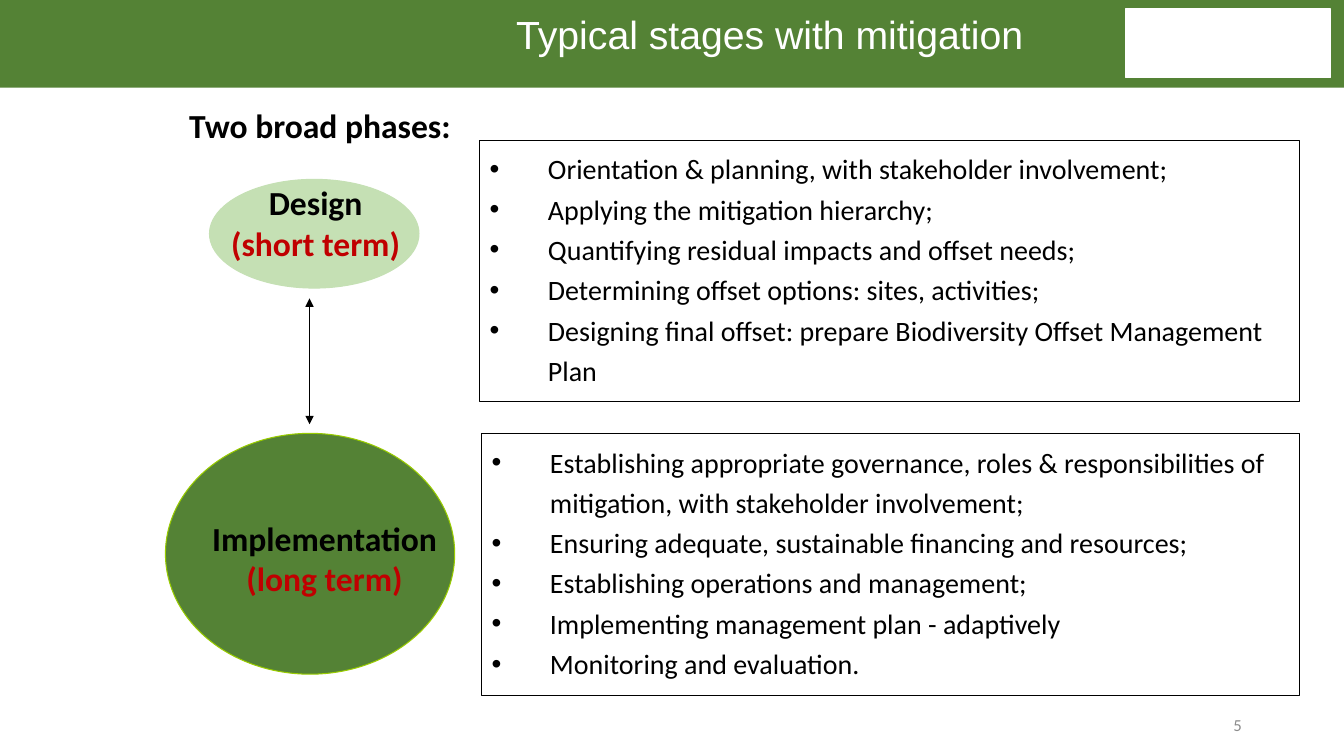
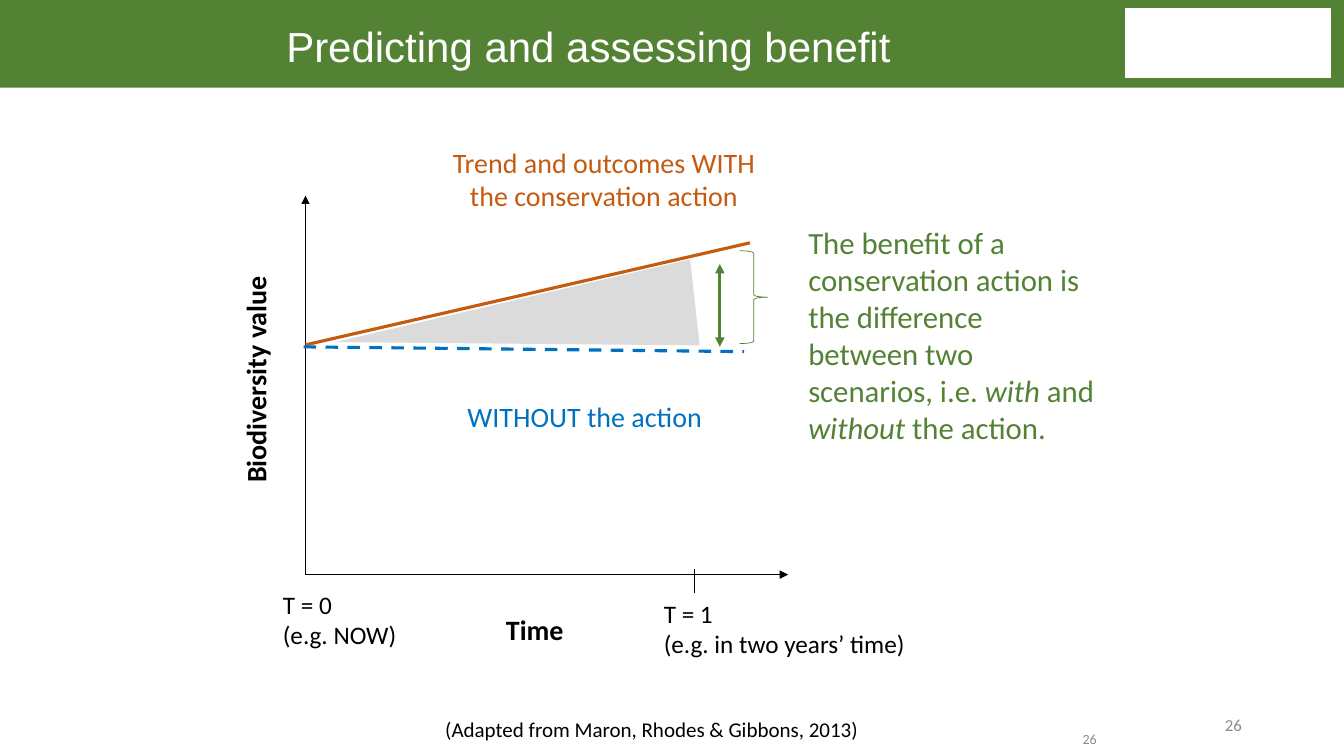
from lxml.etree import SubElement
from pptx import Presentation
from pptx.dml.color import RGBColor
from pptx.enum.dml import MSO_LINE as Dash
from pptx.enum.shapes import MSO_CONNECTOR as Link, MSO_SHAPE as Preset
from pptx.enum.text import MSO_ANCHOR as Anchor, PP_ALIGN as Align
from pptx.oxml.ns import qn
from pptx.util import Cm, Pt

GREEN = RGBColor(0x54, 0x82, 0x35)
PALE_GREEN = RGBColor(0xC5, 0xE0, 0xB4)
LIME = RGBColor(0x99, 0xCC, 0x00)
RED = RGBColor(0xC0, 0x00, 0x00)
ORANGE = RGBColor(0xC5, 0x5A, 0x11)
BLUE = RGBColor(0x00, 0x70, 0xC0)
LIGHT_GREY = RGBColor(0xDB, 0xDB, 0xDB)
GREY = RGBColor(0x8C, 0x8C, 0x8C)
BLACK = RGBColor(0, 0, 0)
WHITE = RGBColor(0xFF, 0xFF, 0xFF)

SLIDE_WIDTH, SLIDE_HEIGHT = 33.87, 19.05
BULLET_INDENT = 1.47


def place(box, origin=(0, 0)):
    """Turn a box in centimetres, measured from an origin, into lengths."""
    left, top, width, height = box
    return Cm(origin[0] + left), Cm(origin[1] + top), Cm(width), Cm(height)


def add_bullet(paragraph):
    """Give a paragraph a round bullet and a hanging indent."""
    properties = paragraph._p.get_or_add_pPr()
    properties.set("marL", str(Cm(BULLET_INDENT)))
    properties.set("indent", str(-Cm(BULLET_INDENT)))
    SubElement(properties, qn("a:buFont"), typeface="Arial")
    SubElement(properties, qn("a:buChar"), char="•")


def write(frame, paragraphs, size=20, color=BLACK, font="Calibri", bold=False,
          align=Align.LEFT, spacing=None, anchor=Anchor.TOP, wrap=True,
          bullets=False):
    """Fill a frame with paragraphs, each a string or a list of (text, format)."""
    frame.word_wrap = wrap
    frame.vertical_anchor = anchor
    for index, content in enumerate(paragraphs):
        paragraph = frame.paragraphs[0] if index == 0 else frame.add_paragraph()
        paragraph.alignment = align
        if spacing:
            paragraph.line_spacing = spacing
        if bullets:
            add_bullet(paragraph)
        pieces = [(content, {})] if isinstance(content, str) else content
        for words, changes in pieces:
            run = paragraph.add_run()
            run.text = words
            run.font.name = font
            run.font.size = Pt(size)
            run.font.bold = bold
            run.font.italic = changes.get("italic", False)
            run.font.color.rgb = changes.get("color", color)


def add_text(slide, box, *paragraphs, origin=(0, 0), **style):
    """Add a text box and return it."""
    label = slide.shapes.add_textbox(*place(box, origin))
    write(label.text_frame, paragraphs, **style)
    return label


def add_preset(slide, preset, box, origin=(0, 0), fill=None, line=None, weight=0.75):
    """Add a preset shape with a plain fill and outline."""
    shape = slide.shapes.add_shape(preset, *place(box, origin))
    shape.shadow.inherit = False
    if fill is None:
        shape.fill.background()
    else:
        shape.fill.solid()
        shape.fill.fore_color.rgb = fill
    if line is None:
        shape.line.fill.background()
    else:
        shape.line.color.rgb = line
        shape.line.width = Pt(weight)
    return shape


def add_line(slide, start, end, origin=(0, 0), color=BLACK, weight=0.5,
             dash=None, ends=()):
    """Add a straight line, with arrowheads at the named ends."""
    x, y = origin
    line = slide.shapes.add_connector(
        Link.STRAIGHT, Cm(x + start[0]), Cm(y + start[1]),
        Cm(x + end[0]), Cm(y + end[1]))
    line.line.color.rgb = color
    line.line.width = Pt(weight)
    if dash:
        line.line.dash_style = dash
    properties = line.element.spPr
    outline = properties.find(qn("a:ln"))
    for end_name in ends:
        SubElement(outline, qn(f"a:{end_name}"), type="triangle")
    SubElement(properties, qn("a:effectLst"))


def add_frame(deck, title, title_box, title_size, number):
    """Add a slide with its band, panel, title and number."""
    slide = deck.slides.add_slide(deck.slide_layouts[6])
    add_preset(slide, Preset.RECTANGLE, (0, 0, SLIDE_WIDTH, 2.21), fill=GREEN)
    add_preset(slide, Preset.RECTANGLE, (28.37, 0.23, 5.16, 1.73),
               fill=WHITE, line=WHITE, weight=1)
    add_text(slide, title_box, title, size=title_size, color=WHITE,
             font="Arial", align=Align.CENTER, spacing=0.9)
    add_text(slide, (29.31, 17.88, 2.24, 0.79), number, size=12, color=GREY,
             align=Align.RIGHT, anchor=Anchor.MIDDLE)
    return slide


def add_phase(slide, box, caption_box, name, term, fill, line):
    """Add an ellipse with a phase name and term placed from its corner."""
    add_preset(slide, Preset.OVAL, box, fill=fill, line=line)
    add_text(slide, caption_box, name, [(term, {"color": RED})], origin=box[:2],
             size=24, bold=True, align=Align.CENTER)


def add_steps(slide, box, *steps):
    """Add an outlined box with a bulleted list of steps."""
    panel = add_preset(slide, Preset.RECTANGLE, box, line=BLACK)
    write(panel.text_frame, steps, spacing=1.2, bullets=True)


def add_graph(slide, origin):
    """Add the graph of both trends, measured from the top of its value axis."""
    width, height = 12.16, 9.55
    add_line(slide, (0, 0), (0, height), origin, ends=["headEnd"])
    add_line(slide, (0, height), (width, height), origin, ends=["tailEnd"])
    add_line(slide, (9.8, 9.4), (9.8, 10.01), origin)
    add_line(slide, (0, 3.76), (11.2, 1.19), origin, ORANGE, 2.25)
    add_line(slide, (-0.05, 3.81), (11.05, 3.93), origin, BLUE, 2.25, Dash.DASH)
    add_line(slide, (10.44, 1.72), (10.44, 3.81), origin, GREEN, 2.25,
             ends=["headEnd", "tailEnd"])
    add_preset(slide, Preset.RIGHT_BRACE, (10.94, 1.39, 0.71, 2.34), origin,
               line=GREEN, weight=0.5)
    gap = add_preset(slide, Preset.ISOSCELES_TRIANGLE, (4.19, -1.37, 2.18, 9.12),
                     origin, fill=LIGHT_GREY)
    gap.rotation = 263.7

    add_text(slide, (4.8, 10.39, 1.98, 1.12), "Time", origin=origin,
             bold=True, wrap=False)
    value_label = add_text(slide, (-4.14, 4.04, 5.77, 1.12), "Biodiversity value",
                           origin=origin, bold=True, wrap=False)
    value_label.rotation = 270
    add_text(slide, (-0.82, 9.8, 3.4, 1.8), "T = 0", "(e.g. NOW)",
             origin=origin, size=18, wrap=False)
    add_text(slide, (8.78, 10.01, 6.65, 1.8), "T = 1", "(e.g. in two years’ time)",
             origin=origin, size=18, wrap=False)
    add_text(slide, (3.2, -1.4, 8.64, 1.96),
             "Trend and outcomes WITH the conservation action",
             origin=origin, color=ORANGE, align=Align.CENTER)
    add_text(slide, (3.83, 5, 6.48, 1.12), "WITHOUT the action",
             origin=origin, color=BLUE, wrap=False)


def build_stages(deck):
    """Build the slide on the two phases of mitigation."""
    slide = add_frame(deck, "Typical stages with mitigation",
                      (8.84, 0.28, 21.11, 1.35), 28, "5")
    add_text(slide, (4.52, 2.51, 7.16, 1.27), "Two broad phases:", size=24, bold=True)
    add_phase(slide, (5.28, 4.52, 5.28, 2.74), (-0.17, -0.05, 5.69, 2.3),
              "Design", "(short term)", PALE_GREEN, PALE_GREEN)
    add_phase(slide, (4.17, 10.92, 7.29, 6.07), (0.76, 2.01, 6.5, 2.3),
              "Implementation", "(long term)", GREEN, LIME)
    add_line(slide, (7.8, 10.69), (7.8, 7.52), weight=0.75,
             ends=["headEnd", "tailEnd"])
    add_steps(slide, (12.09, 3.53, 20.65, 6.6),
              "Orientation & planning, with stakeholder involvement;",
              "Applying the mitigation hierarchy;",
              "Quantifying residual impacts and offset needs;",
              "Determining offset options: sites, activities;",
              "Designing final offset: prepare Biodiversity Offset Management Plan")
    add_steps(slide, (12.14, 10.92, 20.6, 6.6),
              "Establishing appropriate governance, roles & responsibilities of "
              "mitigation, with stakeholder involvement;",
              "Ensuring adequate, sustainable financing and resources;",
              "Establishing operations and management;",
              "Implementing management plan - adaptively",
              "Monitoring and evaluation.")


def build_benefit(deck):
    """Build the slide on the benefit of a conservation action."""
    slide = add_frame(deck, "Predicting and assessing benefit",
                      (6.53, 0.53, 16.61, 1.42), 30, "26")
    add_graph(slide, (7.7, 4.93))
    add_text(slide, (20.12, 5.51, 7.8, 5.89), [
        ("The benefit of a conservation action is the difference between two "
         "scenarios, i.e. ", {}),
        ("with", {"italic": True}), (" and ", {}),
        ("without", {"italic": True}), (" the action.", {}),
    ], size=22, color=GREEN)
    add_text(slide, (10.97, 17.93, 12.17, 0.89),
             "(Adapted from Maron, Rhodes & Gibbons, 2013)", size=15)
    add_text(slide, (26.21, 18.22, 1.68, 0.8), "26", size=10, color=GREY,
             align=Align.RIGHT, anchor=Anchor.MIDDLE)


def main():
    """Build and save the deck."""
    deck = Presentation()
    deck.slide_width, deck.slide_height = Cm(SLIDE_WIDTH), Cm(SLIDE_HEIGHT)
    build_stages(deck)
    build_benefit(deck)
    deck.save("out.pptx")


if __name__ == "__main__":
    main()
